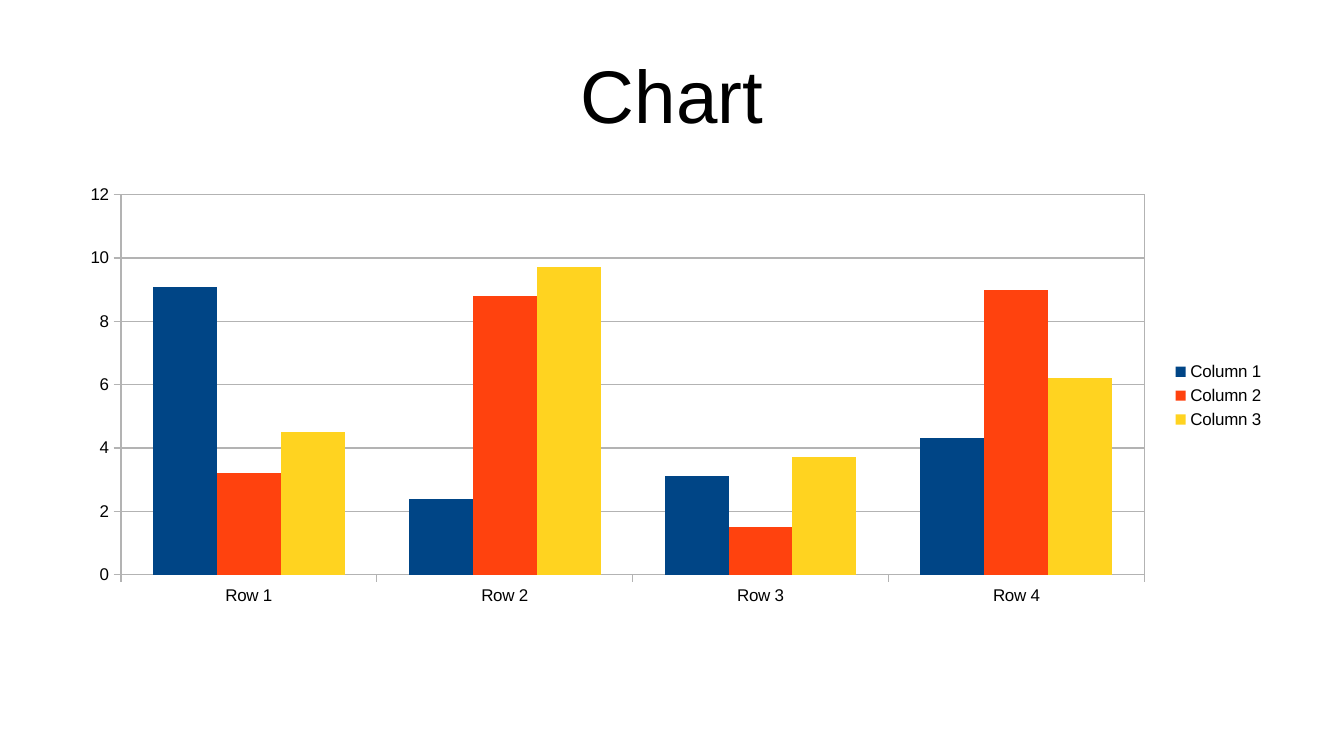
from dataclasses import dataclass

import lxml.etree
import pptx
import pptx.chart.axis
import pptx.chart.chart
import pptx.chart.data
import pptx.dml.color
import pptx.dml.line
import pptx.enum.chart
import pptx.enum.text
import pptx.oxml.ns
import pptx.slide
import pptx.text.text
import pptx.util
from pptx.util import Inches

FONT = "Arial"
COLORS = {
    "text": "000000",
    "grid": "B3B3B3",
    "blue": "004586",
    "orange": "FF420E",
    "yellow": "FFD320",
}
CATEGORIES = [f"Row {number}" for number in range(1, 5)]
PLOT_LAYOUT = {"x": 0.0445, "y": 0.041, "w": 0.846, "h": 0.868}


@dataclass(frozen=True)
class Column:
    name: str
    values: tuple[float, ...]
    color: str


COLUMNS = [
    Column("Column 1", (9.1, 2.4, 3.1, 4.3), "blue"),
    Column("Column 2", (3.2, 8.8, 1.5, 9), "orange"),
    Column("Column 3", (4.5, 9.7, 3.7, 6.2), "yellow"),
]


def rgb(name: str) -> pptx.dml.color.RGBColor:
    return pptx.dml.color.RGBColor.from_string(COLORS[name])


def style_font(font: pptx.text.text.Font, size: float) -> None:
    font.name = FONT
    font.size = pptx.util.Pt(size)
    font.color.rgb = rgb("text")


def style_hairline(line: pptx.dml.line.LineFormat) -> None:
    line.width = pptx.util.Pt(0)
    line.color.rgb = rgb("grid")


def style_axis(axis: pptx.chart.axis._BaseAxis) -> None:
    axis.major_tick_mark = pptx.enum.chart.XL_TICK_MARK.OUTSIDE
    axis.minor_tick_mark = pptx.enum.chart.XL_TICK_MARK.NONE
    style_font(axis.tick_labels.font, 10)
    style_hairline(axis.format.line)


def frame_plot_area(chart: pptx.chart.chart.Chart) -> None:
    """Fix the inner plot position and outline the plot area."""
    qn = pptx.oxml.ns.qn
    add = lxml.etree.SubElement
    plot_area = chart.element.find(".//" + qn("c:plotArea"))
    for old_layout in plot_area.findall(qn("c:layout")):
        plot_area.remove(old_layout)
    layout = lxml.etree.Element(qn("c:layout"))
    manual = add(layout, qn("c:manualLayout"))
    add(manual, qn("c:layoutTarget"), val="inner")
    for side in ("x", "y"):
        add(manual, qn(f"c:{side}Mode"), val="edge")
    for key, fraction in PLOT_LAYOUT.items():
        add(manual, qn(f"c:{key}"), val=str(fraction))
    plot_area.insert(0, layout)

    properties = add(plot_area, qn("c:spPr"))
    add(properties, qn("a:noFill"))
    line = add(properties, qn("a:ln"), w="0")
    fill = add(line, qn("a:solidFill"))
    add(fill, qn("a:srgbClr"), val=COLORS["grid"])


def add_title(slide: pptx.slide.Slide) -> None:
    box = slide.shapes.add_textbox(Inches(0.55), Inches(0.25), Inches(9.92), Inches(1.03))
    frame = box.text_frame
    frame.word_wrap = True
    frame.vertical_anchor = pptx.enum.text.MSO_ANCHOR.MIDDLE
    frame.margin_left = frame.margin_right = frame.margin_top = frame.margin_bottom = 0
    paragraph = frame.paragraphs[0]
    paragraph.alignment = pptx.enum.text.PP_ALIGN.CENTER
    run = paragraph.add_run()
    run.text = "Chart"
    style_font(run.font, 44)


def add_column_chart(slide: pptx.slide.Slide) -> None:
    data = pptx.chart.data.CategoryChartData()
    data.categories = CATEGORIES
    for column in COLUMNS:
        data.add_series(column.name, column.values)
    chart = slide.shapes.add_chart(
        pptx.enum.chart.XL_CHART_TYPE.COLUMN_CLUSTERED,
        Inches(0.55), Inches(1.45), Inches(9.92), Inches(3.59), data,
    ).chart
    chart.has_title = False
    style_font(chart.font, 10)

    plot = chart.plots[0]
    plot.vary_by_categories = False
    plot.gap_width = 100
    plot.overlap = 0
    for series, column in zip(plot.series, COLUMNS):
        series.format.fill.solid()
        series.format.fill.fore_color.rgb = rgb(column.color)
        series.format.line.fill.background()

    style_axis(chart.category_axis)
    value_axis = chart.value_axis
    style_axis(value_axis)
    value_axis.minimum_scale = 0
    value_axis.maximum_scale = 12
    value_axis.major_unit = 2
    value_axis.has_major_gridlines = True
    style_hairline(value_axis.major_gridlines.format.line)

    chart.has_legend = True
    chart.legend.position = pptx.enum.chart.XL_LEGEND_POSITION.RIGHT
    chart.legend.include_in_layout = False
    style_font(chart.legend.font, 10)
    frame_plot_area(chart)


def main() -> None:
    presentation = pptx.Presentation()
    presentation.slide_width = Inches(11.02)
    presentation.slide_height = Inches(6.2)
    slide = presentation.slides.add_slide(presentation.slide_layouts[6])
    add_title(slide)
    add_column_chart(slide)
    presentation.save("out.pptx")


if __name__ == "__main__":
    main()
